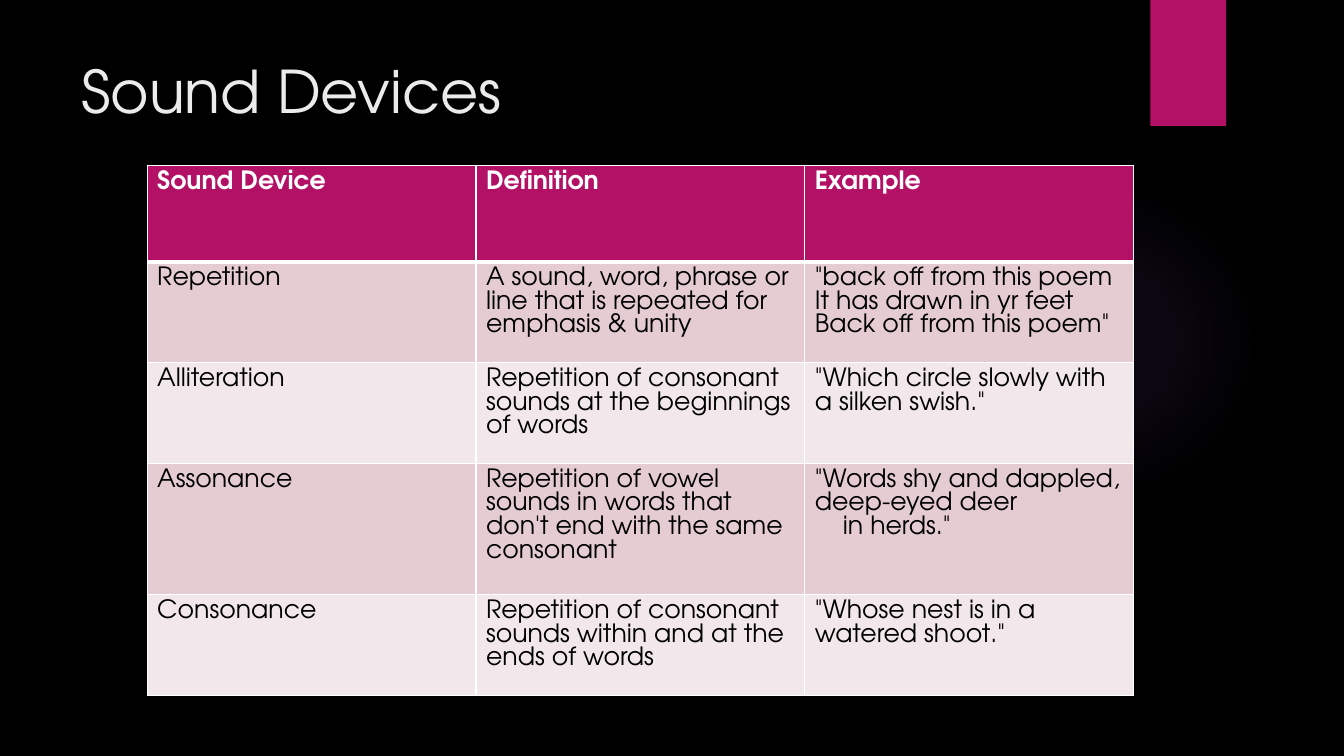
import pptx
import pptx.dml.color
import pptx.enum.shapes
import pptx.enum.text
import pptx.oxml
import pptx.oxml.ns
import pptx.util

Pt = pptx.util.Pt
FONT = "TeX Gyre Adventor"
PINK, WHITE, BLACK = "B31166", "FFFFFF", "000000"
BANDS = ["E5CCD3", "F2E7EA"]
GLOW, GLOW_STOPS = "9B6BF2", [(0, 7), (36, 6), (69, 0)]
TITLE = "Sound Devices"
ROWS = [
    ("Sound Device", "Definition", "Example"),
    ("Repetition",
     "A sound, word, phrase or line that is repeated for emphasis & unity",
     "\"back off from this poem\nIt has drawn in yr feet\nBack off from this poem\""),
    ("Alliteration",
     "Repetition of consonant sounds at the beginnings of words",
     "\"Which circle slowly with a silken swish.\""),
    ("Assonance",
     "Repetition of vowel sounds in words that don't end with the same consonant",
     "\"Words shy and dappled, deep-eyed deer\n\tin herds.\""),
    ("Consonance",
     "Repetition of consonant sounds within and at the ends of words",
     "\"Whose nest is in a watered shoot.\""),
]
TABLE_LEFT, TABLE_TOP, COL_W, ROW_H = 105.1, 118.1, 234.9, 69.1
VERSE_INDENT = 20


def rgb(value):
    return pptx.dml.color.RGBColor.from_string(value)


def xml(body):
    return pptx.oxml.parse_xml(body.replace(" ", " " + pptx.oxml.ns.nsdecls("a") + " ", 1))


def paint(fill, color):
    fill.solid()
    fill.fore_color.rgb = rgb(color)


def write(tf, text, size=18, color=BLACK, bold=False):
    tf.word_wrap = True
    for i, line in enumerate(text.split("\n")):
        p = tf.paragraphs[0] if i == 0 else tf.add_paragraph()
        if line.startswith("\t"):
            pPr = p._p.get_or_add_pPr()
            pPr.set("marL", str(Pt(VERSE_INDENT)))
            pPr.set("indent", "0")
        r = p.add_run()
        r.text = line.strip()
        r.font.name, r.font.size, r.font.bold = FONT, Pt(size), bold
        r.font.color.rgb = rgb(color)


def add_plain(s, kind, left, top, width, height, color):
    sp = s.shapes.add_shape(kind, Pt(left), Pt(top), Pt(width), Pt(height))
    sp.shadow.inherit = False
    sp.line.fill.background()
    paint(sp.fill, color)
    return sp


def add_glow(s):
    sp = add_plain(s, pptx.enum.shapes.MSO_SHAPE.OVAL, 677.5, 131.8, 221.8, 221.8, GLOW)
    stops = "".join(
        f'<a:gs pos="{pos * 1000}"><a:srgbClr val="{GLOW}">'
        f'<a:alpha val="{alpha * 1000}"/></a:srgbClr></a:gs>'
        for pos, alpha in GLOW_STOPS)
    grad = xml(
        f'<a:gradFill rotWithShape="1"><a:gsLst>{stops}</a:gsLst><a:path path="circle">'
        '<a:fillToRect l="50000" t="50000" r="50000" b="50000"/></a:path></a:gradFill>')
    solid = sp._element.spPr.find(pptx.oxml.ns.qn("a:solidFill"))
    sp._element.spPr.replace(solid, grad)


def add_borders(cell, widths):
    tcPr = cell._tc.get_or_add_tcPr()
    for side, width in widths.items():
        tcPr.append(xml(
            f'<a:ln{side} w="{Pt(width)}"><a:solidFill><a:srgbClr val="{WHITE}"/>'
            f'</a:solidFill></a:ln{side}>'))


def add_devices(s):
    table = s.shapes.add_table(
        len(ROWS), len(ROWS[0]), Pt(TABLE_LEFT), Pt(TABLE_TOP),
        Pt(COL_W * len(ROWS[0])), Pt(ROW_H * len(ROWS))).table
    for col in table.columns:
        col.width = Pt(COL_W)
    for i, row in enumerate(ROWS):
        table.rows[i].height = Pt(ROW_H)
        head = i == 0
        widths = {"L": 1, "R": 1, "T": 1, "B": 3 if head else 1}
        if i == 1:
            del widths["T"]
        for j, text in enumerate(row):
            cell = table.cell(i, j)
            add_borders(cell, widths)
            paint(cell.fill, PINK if head else BANDS[(i - 1) % 2])
            write(cell.text_frame, text, color=WHITE if head else BLACK, bold=head)


def main():
    prs = pptx.Presentation()
    prs.slide_width, prs.slide_height = Pt(960), Pt(540)
    s = prs.slides.add_slide(prs.slide_layouts[6])
    paint(s.background.fill, BLACK)
    add_glow(s)
    add_plain(s, pptx.enum.shapes.MSO_SHAPE.RECTANGLE, 821.8, 0, 54, 90, PINK)
    title = s.shapes.add_textbox(Pt(51), Pt(35.6), Pt(741), Pt(110))
    title.text_frame.vertical_anchor = pptx.enum.text.MSO_ANCHOR.TOP
    write(title.text_frame, TITLE, size=42, color="EBEBEB")
    add_devices(s)
    prs.save("out.pptx")


if __name__ == "__main__":
    main()
